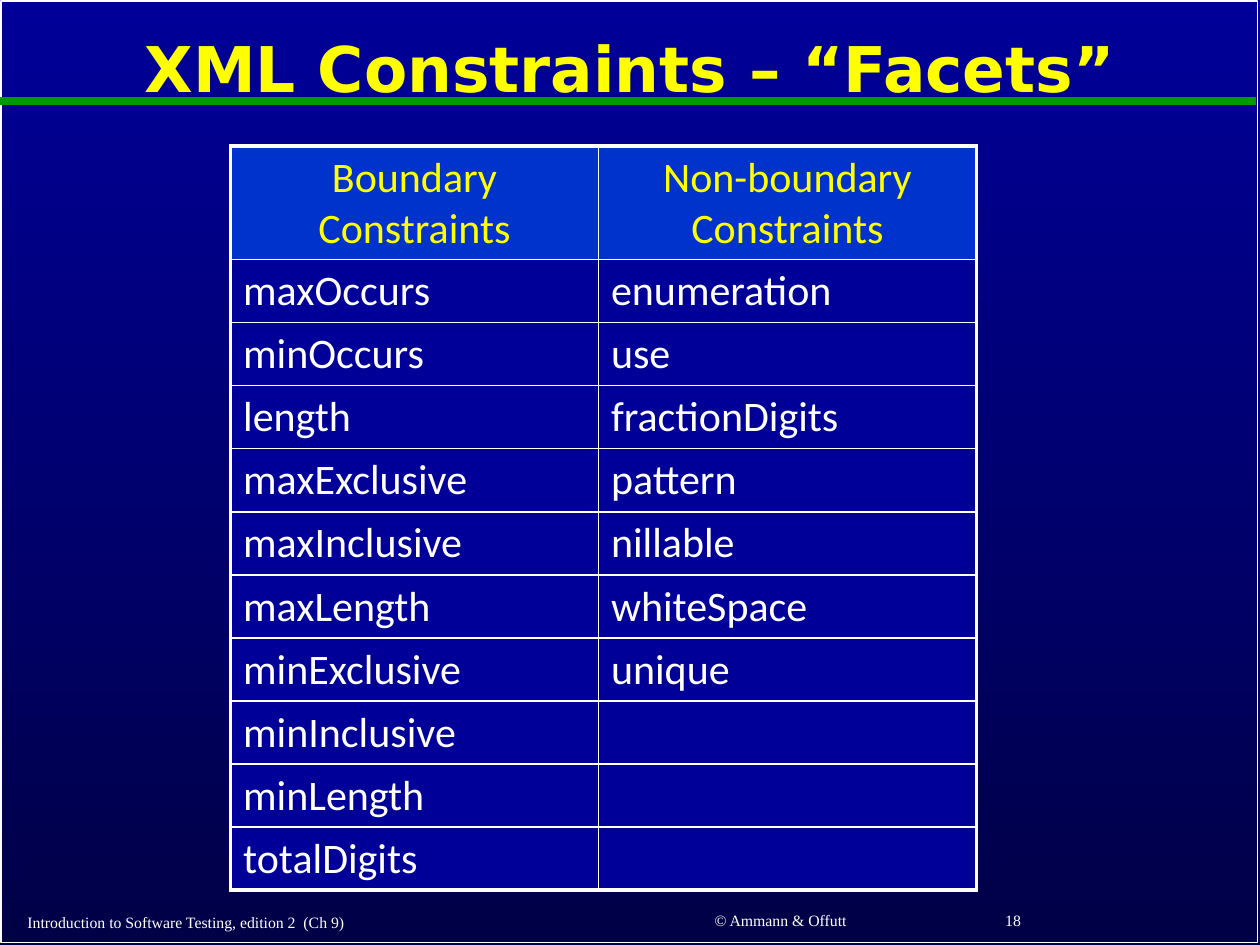
"""Build the slide that lists XML boundary and non-boundary constraints."""
from itertools import zip_longest

from lxml.etree import SubElement
from pptx import Presentation
from pptx.dml.color import RGBColor
from pptx.enum.shapes import MSO_CONNECTOR, MSO_SHAPE
from pptx.enum.text import MSO_ANCHOR as Anchor, PP_ALIGN as Align
from pptx.oxml.ns import qn
from pptx.util import Inches, Pt

TITLE = "XML Constraints – “Facets”"
HEADERS = ("Boundary Constraints", "Non-boundary Constraints")
BOUNDARY = ("maxOccurs", "minOccurs", "length", "maxExclusive", "maxInclusive",
            "maxLength", "minExclusive", "minInclusive", "minLength", "totalDigits")
NON_BOUNDARY = ("enumeration", "use", "fractionDigits", "pattern", "nillable",
                "whiteSpace", "unique")
FOOTERS = (
    ("Introduction to Software Testing, edition 2  (Ch 9)", (0.12, 7.13, 4.27, 0.31), Align.LEFT),
    ("© Ammann & Offutt", (4.61, 7.15, 3.17, 0.28), Align.CENTER),
    ("18", (7.88, 7.14, 1.97, 0.29), Align.LEFT),
)
SLIDE_SIZE = (10, 7.5)
TITLE_BOX = (0.1, 0.11, 9.8, 0.92)
FRAME_BOX = (0.01, 0.01, 9.97, 7.47)
RULE_Y, RULE_END = 0.8, 9.97
TABLE_ORIGIN = (1.83, 1.16)
COLUMN_WIDTHS = (2.92, 3)
HEADER_HEIGHT, ROW_HEIGHT = 0.9, 0.5

THEME = {
    "backdrop": ("000099", "000047"),
    "white": "FFFFFF",
    "rule": "009900",
    "header_fill": "0033CC",
    "cell_fill": "000099",
    "thin": 1, "thick": 2.25, "rule_width": 4.5,
    "title": {"name": "DejaVu Sans", "size": 36, "bold": True, "color": "FFFF00"},
    "header": {"name": "Calibri", "size": 24, "color": "FFFF00"},
    "body": {"name": "Calibri", "size": 24, "color": "FFFFFF"},
    "footer": {"name": "Times New Roman", "size": 9, "color": "FFFFFF"},
}


def rgb(code):
    """Return a colour object for a hex code."""
    return RGBColor.from_string(code)


def inches(values):
    """Convert a sequence of numbers to lengths."""
    return [Inches(value) for value in values]


def write(frame, text, style, **paragraph_format):
    """Put one styled paragraph into a text frame."""
    paragraph = frame.paragraphs[0]
    for name, value in paragraph_format.items():
        setattr(paragraph, name, value)
    run = paragraph.add_run()
    run.text = text
    for name, value in THEME[style].items():
        if name == "color":
            run.font.color.rgb = rgb(value)
        else:
            setattr(run.font, name, Pt(value) if name == "size" else value)


def paint_backdrop(slide):
    """Fill the background from top to bottom."""
    fill = slide.background.fill
    fill.gradient()
    fill.gradient_angle = 270
    for stop, position, code in zip(fill.gradient_stops, (0, 1), THEME["backdrop"]):
        stop.position = position
        stop.color.rgb = rgb(code)


def add_frame_and_rule(slide):
    """Add the slide outline and the line under the title."""
    outline = slide.shapes.add_shape(MSO_SHAPE.RECTANGLE, *inches(FRAME_BOX))
    outline.shadow.inherit = False
    outline.fill.background()
    rule = slide.shapes.add_connector(
        MSO_CONNECTOR.STRAIGHT, *inches((0, RULE_Y, RULE_END, RULE_Y)))
    SubElement(rule.element.spPr, qn("a:effectLst"))
    for shape, color, width in ((outline, "white", "thin"), (rule, "rule", "rule_width")):
        shape.line.color.rgb = rgb(THEME[color])
        shape.line.width = Pt(THEME[width])


def add_title(slide):
    """Place the title in front of the rule."""
    title = slide.shapes.title
    title.left, title.top, title.width, title.height = inches(TITLE_BOX)
    title.text_frame.vertical_anchor = Anchor.MIDDLE
    write(title.text_frame, TITLE, "title", alignment=Align.CENTER, line_spacing=0.9)
    title.element.getparent().append(title.element)


def add_footers(slide):
    """Add the footer line."""
    for text, box, alignment in FOOTERS:
        frame = slide.shapes.add_textbox(*inches(box)).text_frame
        frame.word_wrap = True
        frame.vertical_anchor = Anchor.BOTTOM
        write(frame, text, "footer", alignment=alignment)


def set_borders(cell, outer_edges):
    """Draw cell borders, thick where the edge is outside the table."""
    properties = cell._tc.get_or_add_tcPr()
    for index, edge in enumerate(("lnL", "lnR", "lnT", "lnB")):
        width = THEME["thick" if edge in outer_edges else "thin"]
        line = properties.makeelement(qn(f"a:{edge}"), {"w": str(Pt(width))})
        fill = SubElement(line, qn("a:solidFill"))
        SubElement(fill, qn("a:srgbClr"), val=THEME["white"])
        properties.insert(index, line)


def add_constraint_table(slide):
    """Add the two-column table of constraints."""
    rows = [HEADERS, *zip_longest(BOUNDARY, NON_BOUNDARY, fillvalue="")]
    heights = [HEADER_HEIGHT] + [ROW_HEIGHT] * len(BOUNDARY)
    size = (sum(COLUMN_WIDTHS), sum(heights))
    table = slide.shapes.add_table(
        len(rows), len(HEADERS), *inches(TABLE_ORIGIN + size)).table
    for column, width in zip(table.columns, COLUMN_WIDTHS):
        column.width = Inches(width)
    for row, height in zip(table.rows, heights):
        row.height = Inches(height)
    for r, texts in enumerate(rows):
        style = "body" if r else "header"
        for c, text in enumerate(texts):
            cell = table.cell(r, c)
            cell.fill.solid()
            cell.fill.fore_color.rgb = rgb(THEME["cell_fill" if r else "header_fill"])
            if text:
                write(cell.text_frame, text, style, space_before=Pt(4.8),
                      alignment=Align.LEFT if r else Align.CENTER)
            edges = {"lnR" if c else "lnL"}
            edges |= {"lnT"} if r == 0 else set()
            edges |= {"lnB"} if r == len(rows) - 1 else set()
            set_borders(cell, edges)


def main():
    """Build and save the presentation."""
    presentation = Presentation()
    presentation.slide_width, presentation.slide_height = inches(SLIDE_SIZE)
    slide = presentation.slides.add_slide(
        presentation.slide_layouts.get_by_name("Title Only"))
    paint_backdrop(slide)
    add_frame_and_rule(slide)
    add_title(slide)
    add_footers(slide)
    add_constraint_table(slide)
    presentation.save("out.pptx")


if __name__ == "__main__":
    main()
